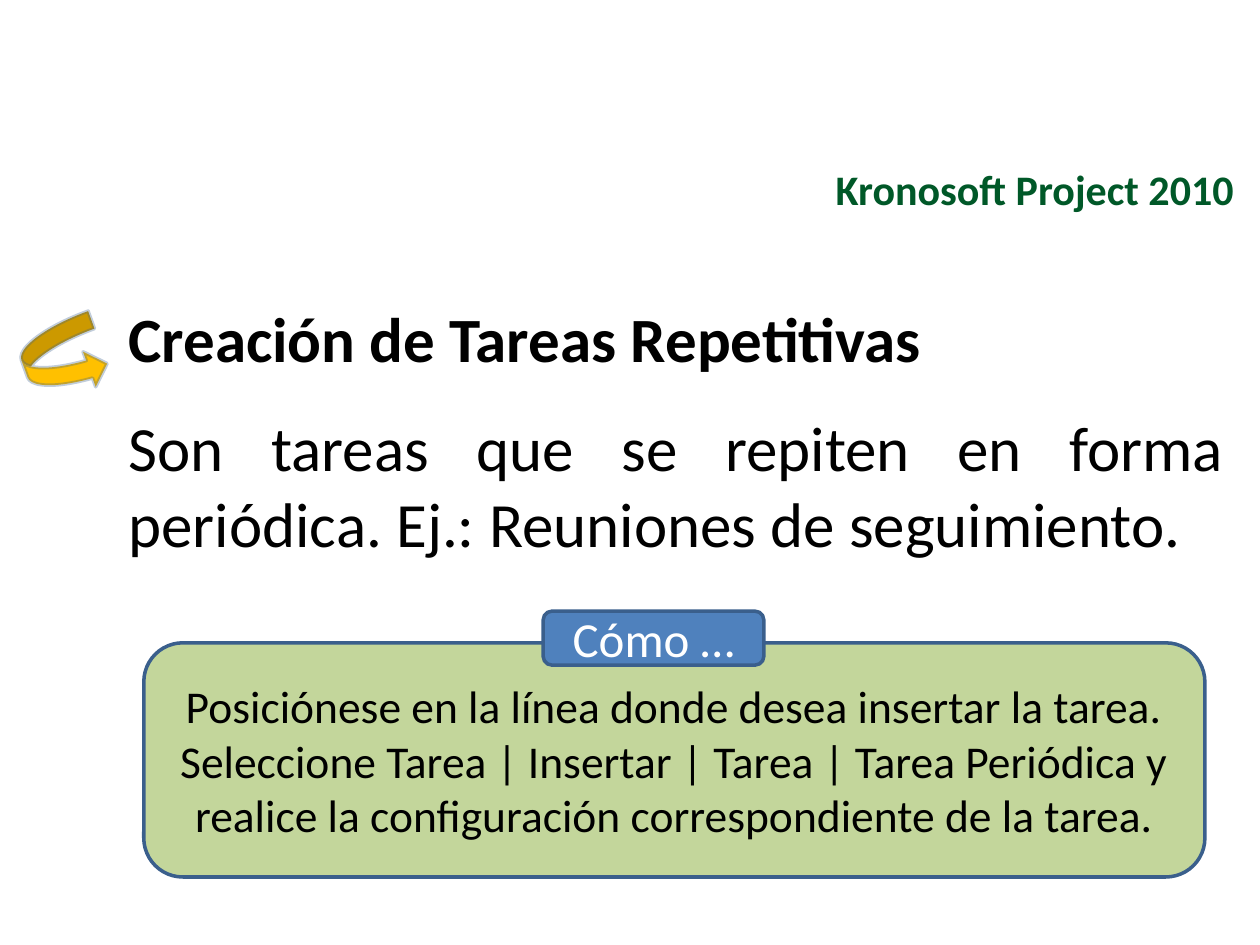
from pptx import Presentation
from pptx.dml.color import RGBColor
from pptx.enum.shapes import MSO_SHAPE as Preset
from pptx.enum.text import MSO_ANCHOR as Anchor, PP_ALIGN as Align
from pptx.oxml.ns import qn
from pptx.util import Cm, Pt
from lxml.etree import SubElement

BLACK = RGBColor(0x00, 0x00, 0x00)
WHITE = RGBColor(0xFF, 0xFF, 0xFF)
GREEN = RGBColor(0x00, 0x58, 0x28)
LIME = RGBColor(0xC3, 0xD6, 0x9B)
BLUE = RGBColor(0x4F, 0x81, 0xBD)
NAVY = RGBColor(0x3A, 0x5F, 0x8C)
GOLD = RGBColor(0xFF, 0xC0, 0x00)


def style_para(para, size, color, align, bold=False):
    para.alignment = align
    for span in para.runs:
        span.font.name = "Calibri"
        span.font.size = Pt(size)
        span.font.bold = bold
        span.font.color.rgb = color


def add_text_box(page, left, top, width, height, lines, anchor=Anchor.TOP):
    box = page.shapes.add_textbox(Cm(left), Cm(top), Cm(width), Cm(height))
    frame = box.text_frame
    frame.word_wrap = True
    frame.vertical_anchor = anchor
    frame.text = "\n".join(lines)
    return frame.paragraphs


def add_outlined(shapes, preset, left, top, width, height, fill):
    shape = shapes.add_shape(preset, Cm(left), Cm(top), Cm(width), Cm(height))
    shape.shadow.inherit = False
    shape.fill.solid()
    shape.fill.fore_color.rgb = fill
    shape.line.color.rgb = NAVY
    shape.line.width = Pt(2)
    return shape


def add_label(shape, text, size, color):
    frame = shape.text_frame
    frame.word_wrap = True
    frame.vertical_anchor = Anchor.MIDDLE
    frame.text = text
    style_para(frame.paragraphs[0], size, color, Align.CENTER)


def add_header(page, left, top, width, height):
    paras = add_text_box(page, left, top, width, height,
                         ["Kronosoft Project 2010"], Anchor.MIDDLE)
    style_para(paras[0], 24, GREEN, Align.RIGHT, bold=True)


def add_topic(page, left, top, width, height):
    arrow = add_outlined(page.shapes, Preset.CURVED_RIGHT_ARROW,
                         left, top + 0.58, 1.6, 1.5, GOLD)
    arrow.rotation = 340.1
    outline = next(arrow.element.iter(qn("a:ln")))
    line_color = next(outline.iter(qn("a:srgbClr")))
    SubElement(line_color, qn("a:alpha"), val="31000")

    indent = 1.86
    title, body = add_text_box(page, left + indent, top, width - indent, height, [
        "Creación de Tareas Repetitivas",
        "Son tareas que se repiten en forma periódica. Ej.: Reuniones de seguimiento.",
    ])
    style_para(title, 36, BLACK, Align.LEFT, bold=True)
    style_para(body, 36, BLACK, Align.JUSTIFY)
    title.space_after = Pt(12)
    body.space_before = Pt(7)


def add_how_to(page, left, top, width, height):
    group = page.shapes.add_group_shape()
    tab_height = 1.09
    drop = 0.64
    panel = add_outlined(group.shapes, Preset.ROUNDED_RECTANGLE,
                         left, top + drop, width, height - drop, LIME)
    add_label(panel, "Posiciónese en la línea donde desea insertar la tarea. "
                     "Seleccione Tarea | Insertar | Tarea | Tarea Periódica y "
                     "realice la configuración correspondiente de la tarea.", 26, BLACK)
    tab = add_outlined(group.shapes, Preset.ROUNDED_RECTANGLE,
                       left + 8.05, top, 4.45, tab_height, BLUE)
    add_label(tab, "Cómo …", 28, WHITE)


def main():
    deck = Presentation()
    deck.slide_width, deck.slide_height = Cm(25.4), Cm(19.05)
    page = deck.slides.add_slide(deck.slide_layouts[6])
    add_topic(page, 0.48, 5.92, 24.44, 5.6)
    add_how_to(page, 2.9, 12.32, 21.39, 5.36)
    add_header(page, 13.69, 2.92, 11.43, 1.75)
    deck.save("out.pptx")


if __name__ == "__main__":
    main()
